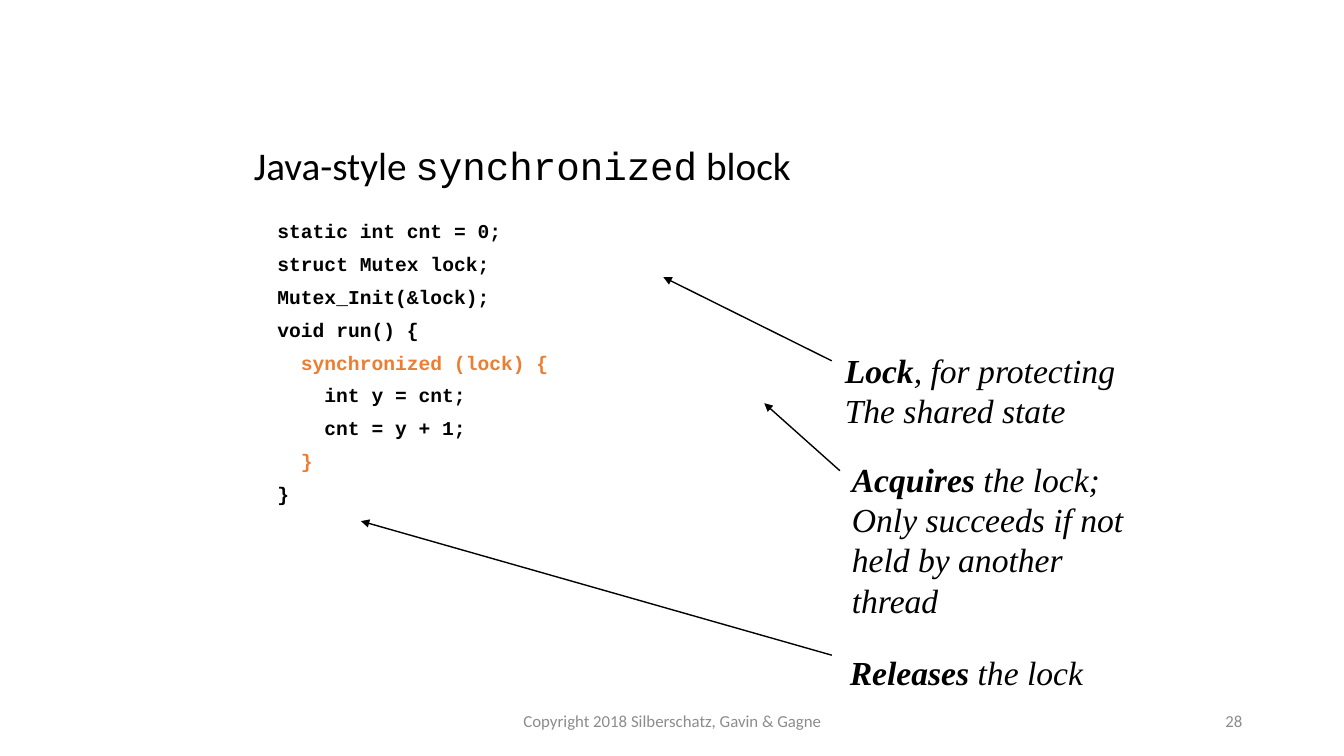
from pptx import Presentation
from pptx.dml.color import RGBColor
from pptx.enum.shapes import MSO_CONNECTOR
from pptx.enum.text import MSO_ANCHOR, MSO_AUTO_SIZE, PP_ALIGN
from pptx.oxml.ns import qn
from pptx.util import Pt
from lxml import etree

PX = 9144  # 100 px to the inch
STRAIGHT = MSO_CONNECTOR.STRAIGHT
TOP, MIDDLE, BOTTOM = MSO_ANCHOR.TOP, MSO_ANCHOR.MIDDLE, MSO_ANCHOR.BOTTOM
LEFT, CENTER, RIGHT = PP_ALIGN.LEFT, PP_ALIGN.CENTER, PP_ALIGN.RIGHT
GROW = MSO_AUTO_SIZE.SHAPE_TO_FIT_TEXT
BLACK, ORANGE, GREY = "000000", "ED7D31", "8C8C8C"
SANS, MONO, SERIF = "Calibri", "Courier New", "Times New Roman"


def add_text_frame(left, top, width, height, anchor=TOP):
    box = slide.shapes.add_textbox(left * PX, top * PX, width * PX, height * PX)
    frame = box.text_frame
    frame.word_wrap = True
    frame.vertical_anchor = anchor
    return frame


def add_run(paragraph, text, font, size, color=BLACK, bold=False, italic=False):
    run = paragraph.add_run()
    run.text = text
    run.font.name = font
    run.font.size = Pt(size)
    run.font.bold = bold
    run.font.italic = italic
    run.font.color.rgb = RGBColor.from_string(color)


prs = Presentation()
prs.slide_width, prs.slide_height = 1333 * PX, 750 * PX
slide = prs.slides.add_slide(prs.slide_layouts[6])

# Title
heading = add_text_frame(242, 67, 850, 125, BOTTOM).paragraphs[0]
heading.line_spacing = 0.9
for words, font in [("Java-style ", SANS), ("synchronized", MONO), (" block", SANS)]:
    add_run(heading, words, font, 28)

# Code: nesting depth, statement, colour
code_lines = [
    (0, "static int cnt = 0;", BLACK),
    (0, "struct Mutex lock;", BLACK),
    (0, "Mutex_Init(&lock);", BLACK),
    (0, "void run() {", BLACK),
    (1, "synchronized (lock) {", ORANGE),
    (2, "int y = cnt;", BLACK),
    (2, "cnt = y + 1;", BLACK),
    (1, "}", ORANGE),
    (0, "}", BLACK),
]
code = add_text_frame(242, 217, 850, 500)
for number, (depth, statement, color) in enumerate(code_lines):
    line = code.add_paragraph() if number else code.paragraphs[0]
    line.line_spacing = 0.8
    line.space_before = Pt(10)
    # Each depth is two characters of 8.4 pt wide
    line._p.get_or_add_pPr().set("marL", str(Pt(16.8 * (depth + 1))))
    add_run(line, statement, MONO, 14, color, bold=True)

# Notes: box, key word, rest of first line, further lines, arrow start and tip
notes = [
    ((828, 342, 299, 91), "Lock", ", for protecting",
     ["The shared state"], (825, 358, 658, 275)),
    ((835, 450, 292, 172), "Acquires", " the lock;",
     ["Only succeeds if not", "held by another", "thread"], (833, 467, 758, 400)),
    ((833, 642, 252, 50), "Releases", " the lock",
     [], (825, 650, 358, 517)),
]
for box, key_word, rest, further_lines, ends in notes:
    note = add_text_frame(*box)
    note.word_wrap = False
    note.auto_size = GROW
    add_run(note.paragraphs[0], key_word, SERIF, 24, bold=True, italic=True)
    add_run(note.paragraphs[0], rest, SERIF, 24, italic=True)
    for words in further_lines:
        add_run(note.add_paragraph(), words, SERIF, 24, italic=True)

    arrow = slide.shapes.add_connector(STRAIGHT, *[end * PX for end in ends])
    arrow.line.width = Pt(1)
    arrow.line.color.rgb = RGBColor.from_string(BLACK)
    etree.SubElement(arrow.line._get_or_add_ln(), qn("a:tailEnd"), type="triangle")
    etree.SubElement(arrow._element.spPr, qn("a:effectLst"))

# Footer and slide number
for left, width, words, alignment in [
    (442, 450, "Copyright 2018 Silberschatz, Gavin & Gagne", CENTER),
    (942, 300, "28", RIGHT),
]:
    footer = add_text_frame(left, 695, width, 40, MIDDLE).paragraphs[0]
    footer.alignment = alignment
    add_run(footer, words, SANS, 12, GREY)

prs.save("out.pptx")
